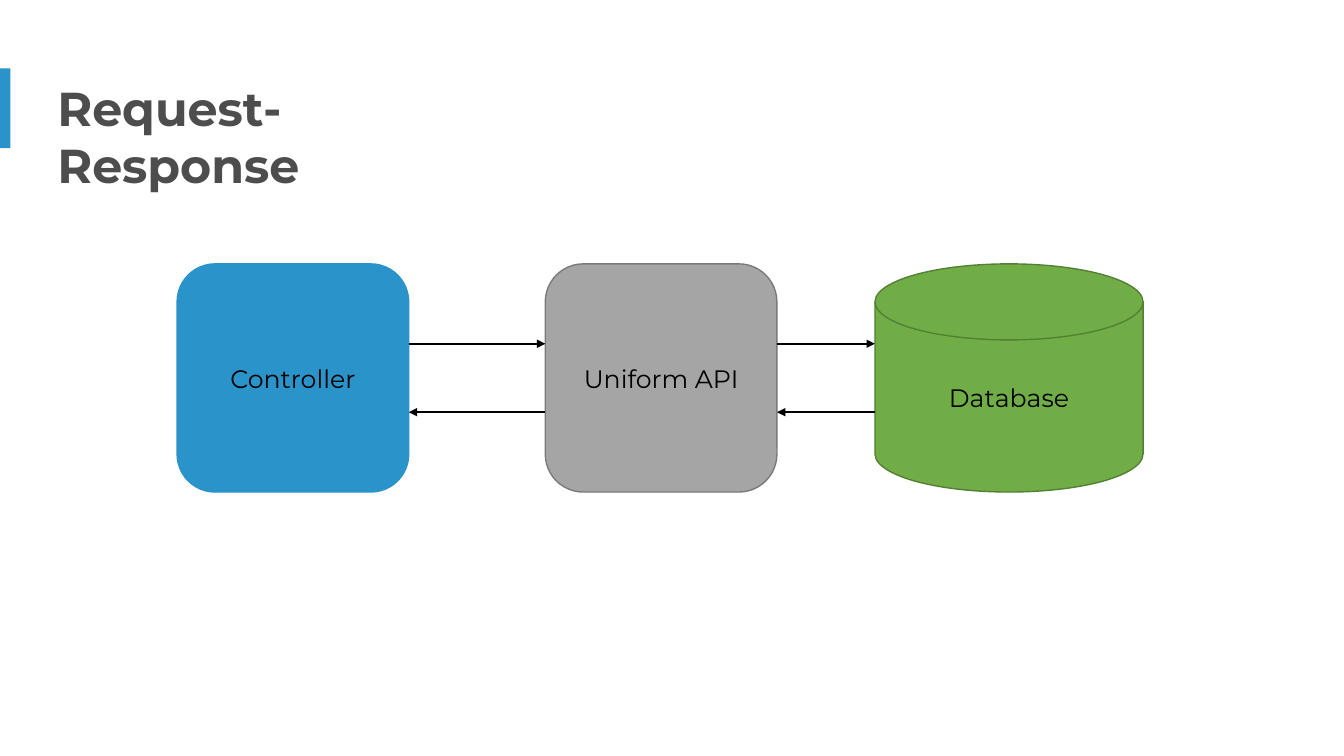
from dataclasses import dataclass

from lxml import etree
from pptx import Presentation
from pptx.dml.color import RGBColor
from pptx.enum.shapes import MSO_CONNECTOR, MSO_SHAPE
from pptx.enum.text import MSO_ANCHOR, PP_ALIGN
from pptx.oxml.ns import qn
from pptx.util import Pt

RECTANGLE = MSO_SHAPE.RECTANGLE
ROUNDED = MSO_SHAPE.ROUNDED_RECTANGLE
DISK = MSO_SHAPE.FLOWCHART_MAGNETIC_DISK
STRAIGHT = MSO_CONNECTOR.STRAIGHT
MIDDLE = MSO_ANCHOR.MIDDLE
CENTER = PP_ALIGN.CENTER


@dataclass(frozen=True)
class Theme:
    font: str = "Montserrat"
    title_size: float = 34
    label_size: float = 18
    outline: float = 1
    arrow: float = 1.5
    title: RGBColor = RGBColor(0x4D, 0x4D, 0x4D)
    ink: RGBColor = RGBColor(0, 0, 0)
    blue: RGBColor = RGBColor(0x29, 0x93, 0xCA)
    gray: RGBColor = RGBColor(0xA5, 0xA5, 0xA5)
    gray_edge: RGBColor = RGBColor(0x7A, 0x7A, 0x7A)
    green: RGBColor = RGBColor(0x70, 0xAD, 0x47)
    green_edge: RGBColor = RGBColor(0x53, 0x80, 0x35)


THEME = Theme()


def style_text(para, size, color, bold=False):
    para.font.name = THEME.font
    para.font.size = Pt(size)
    para.font.bold = bold
    para.font.color.rgb = color


def add_block(page, kind, left, top, width, height, fill, edge=None):
    block = page.shapes.add_shape(kind, Pt(left), Pt(top), Pt(width), Pt(height))
    block.shadow.inherit = False
    block.fill.solid()
    block.fill.fore_color.rgb = fill
    if edge is None:
        block.line.fill.background()
    else:
        block.line.color.rgb = edge
        block.line.width = Pt(THEME.outline)
    return block


def add_arrow(page, start, end, y):
    arrow = page.shapes.add_connector(STRAIGHT, Pt(start), Pt(y), Pt(end), Pt(y))
    arrow.line.color.rgb = THEME.ink
    arrow.line.width = Pt(THEME.arrow)
    # Arrowhead at the end, no shadow
    etree.SubElement(arrow.line._get_or_add_ln(), qn("a:tailEnd"), type="triangle")
    etree.SubElement(arrow._element.spPr, qn("a:effectLst"))


def add_heading(page, text, left, top, width, height):
    # Accent bar at the slide edge
    add_block(page, RECTANGLE, left, top, 7.5, height, THEME.blue)

    # Title, narrow enough to break after the hyphen
    indent, drop = 41, 7.2
    box = page.shapes.add_textbox(
        Pt(left + indent), Pt(top + drop), Pt(width - indent), Pt(height))
    frame = box.text_frame
    frame.word_wrap = True
    frame.margin_left = frame.margin_right = Pt(0)
    frame.margin_top = frame.margin_bottom = Pt(0)
    para = frame.paragraphs[0]
    para.text = text
    style_text(para, THEME.title_size, THEME.title, bold=True)


def add_flow(page, left, top, width, height):
    # Label, shape, offset from the left, width, fill, outline
    disk_width = 191.5
    stages = [
        ("Controller", ROUNDED, 0, 165.5, THEME.blue, THEME.blue),
        ("Uniform API", ROUNDED, 263, 165.5, THEME.gray, THEME.gray_edge),
        ("Database", DISK, width - disk_width, disk_width,
         THEME.green, THEME.green_edge),
    ]
    for label, kind, offset, stage_width, fill, edge in stages:
        block = add_block(
            page, kind, left + offset, top, stage_width, height, fill, edge)
        block.text_frame.vertical_anchor = MIDDLE
        para = block.text_frame.paragraphs[0]
        para.text = label
        para.alignment = CENTER
        style_text(para, THEME.label_size, THEME.ink)

    # Request above, response below, in each gap
    for source, target in zip(stages, stages[1:]):
        gap_start = left + source[2] + source[3]
        gap_end = left + target[2]
        add_arrow(page, gap_start, gap_end, top + 0.35 * height)
        add_arrow(page, gap_end, gap_start, top + 0.65 * height)


def main():
    deck = Presentation()
    deck.slide_width, deck.slide_height = Pt(960), Pt(540)
    page = deck.slides.add_slide(deck.slide_layouts[6])
    add_heading(page, "Request-Response", 0, 48.8, 360, 57)
    add_flow(page, 126.5, 188.5, 690, 163)
    deck.save("out.pptx")


if __name__ == "__main__":
    main()
